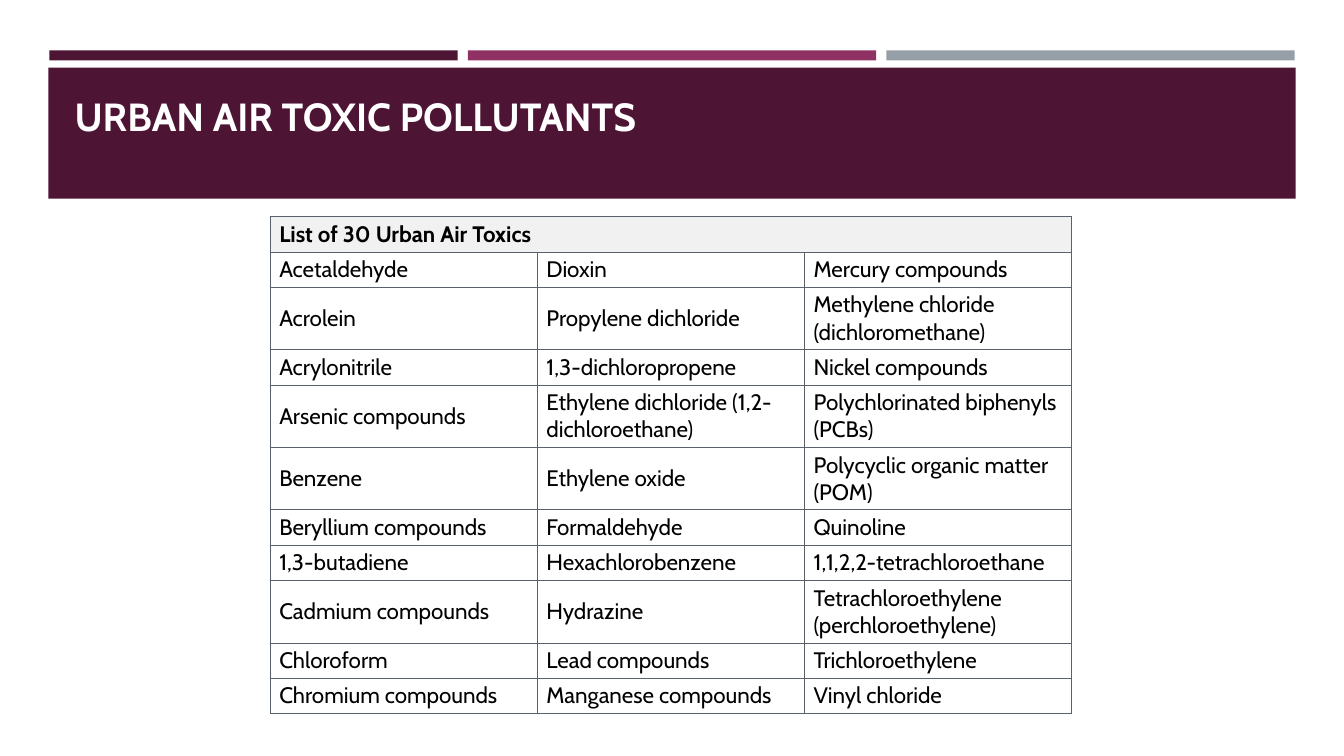
import pptx
import pptx.dml.color
import pptx.enum.shapes
import pptx.enum.text
import pptx.oxml
import pptx.oxml.ns
import pptx.util
from pptx.util import Inches

RGBColor = pptx.dml.color.RGBColor
PLUM = RGBColor(0x4D, 0x14, 0x34)
MAGENTA = RGBColor(0x90, 0x31, 0x63)
GREY = RGBColor(0x96, 0x9F, 0xA7)
BORDER = RGBColor(0x5B, 0x61, 0x6B)
HEADER = RGBColor(0xF1, 0xF1, 0xF1)
WHITE = RGBColor(0xFF, 0xFF, 0xFF)
BLACK = RGBColor(0, 0, 0)

FONT = "Cabin"
ONE_LINE, TWO_LINES = 0.35, 0.62
LONGEST_SINGLE_LINE = 25  # characters that fit a column

TABLE_TITLE = "List of 30 Urban Air Toxics"
TOXICS = [
    ("Acetaldehyde", "Dioxin", "Mercury compounds"),
    ("Acrolein", "Propylene dichloride", "Methylene chloride (dichloromethane)"),
    ("Acrylonitrile", "1,3-dichloropropene", "Nickel compounds"),
    ("Arsenic compounds", "Ethylene dichloride (1,2-dichloroethane)",
     "Polychlorinated biphenyls (PCBs)"),
    ("Benzene", "Ethylene oxide", "Polycyclic organic matter (POM)"),
    ("Beryllium compounds", "Formaldehyde", "Quinoline"),
    ("1,3-butadiene", "Hexachlorobenzene", "1,1,2,2-tetrachloroethane"),
    ("Cadmium compounds", "Hydrazine", "Tetrachloroethylene (perchloroethylene)"),
    ("Chloroform", "Lead compounds", "Trichloroethylene"),
    ("Chromium compounds", "Manganese compounds", "Vinyl chloride"),
]


def set_font(para, size, color, bold):
    para.font.name = FONT
    para.font.size = pptx.util.Pt(size)
    para.font.color.rgb = color
    para.font.bold = bold


def add_bar(page, left, top, width, height, color):
    bar = page.shapes.add_shape(
        pptx.enum.shapes.MSO_SHAPE.RECTANGLE,
        Inches(left), Inches(top), Inches(width), Inches(height))
    bar.shadow.inherit = False
    bar.fill.solid()
    bar.fill.fore_color.rgb = color
    bar.line.fill.background()


def place_title(page, text):
    title = page.shapes.title
    page.shapes.element.append(title.element)  # bring in front of the band
    title.left, title.top = Inches(0.64), Inches(0.77)
    title.width, title.height = Inches(12.06), Inches(1.11)
    frame = title.text_frame
    frame.text = text
    frame.auto_size = pptx.enum.text.MSO_AUTO_SIZE.NONE
    frame.vertical_anchor = pptx.enum.text.MSO_ANCHOR.BOTTOM
    frame.margin_bottom = Inches(0.5)
    para = frame.paragraphs[0]
    para.alignment = pptx.enum.text.PP_ALIGN.LEFT
    set_font(para, 28, WHITE, True)


def add_borders(cell):
    properties = cell._tc.get_or_add_tcPr()
    for position, side in enumerate(("lnL", "lnR", "lnT", "lnB")):
        properties.insert(position, pptx.oxml.parse_xml(
            f'<a:{side} {pptx.oxml.ns.nsdecls("a")} w="{pptx.util.Pt(0.75)}">'
            f'<a:solidFill><a:srgbClr val="{BORDER}"/></a:solidFill></a:{side}>'))


def format_cell(cell, text, fill, bold):
    cell.text = text
    cell.vertical_anchor = pptx.enum.text.MSO_ANCHOR.MIDDLE
    cell.margin_left = cell.margin_right = Inches(0.09)
    cell.margin_top = cell.margin_bottom = Inches(0.04)
    cell.fill.solid()
    cell.fill.fore_color.rgb = fill
    set_font(cell.text_frame.paragraphs[0], 16, BLACK, bold)
    add_borders(cell)


def add_toxics_table(page):
    rows = [(TABLE_TITLE, "", "")] + TOXICS
    table = page.shapes.add_table(
        len(rows), 3, Inches(2.68), Inches(2.15), Inches(7.95), Inches(4.97)).table
    for column in table.columns:
        column.width = Inches(2.65)
    for index, names in enumerate(rows):
        is_header = index == 0
        wraps = not is_header and max(map(len, names)) > LONGEST_SINGLE_LINE
        table.rows[index].height = Inches(TWO_LINES if wraps else ONE_LINE)
        for column, name in enumerate(names):
            format_cell(table.cell(index, column), name,
                        HEADER if is_header else WHITE, is_header)
    table.cell(0, 0).merge(table.cell(0, 2))


def main():
    deck = pptx.Presentation()
    deck.slide_width, deck.slide_height = Inches(13.33), Inches(7.5)
    page = deck.slides.add_slide(deck.slide_layouts[5])

    # Accent bars and title band
    for index, color in enumerate((PLUM, MAGENTA, GREY)):
        add_bar(page, 0.49 + 4.15 * index, 0.5, 4.05, 0.1, color)
    add_bar(page, 0.48, 0.67, 12.37, 1.3, PLUM)
    place_title(page, "URBAN AIR TOXIC POLLUTANTS")

    # Pollutant list
    add_toxics_table(page)
    deck.save("out.pptx")


if __name__ == "__main__":
    main()
